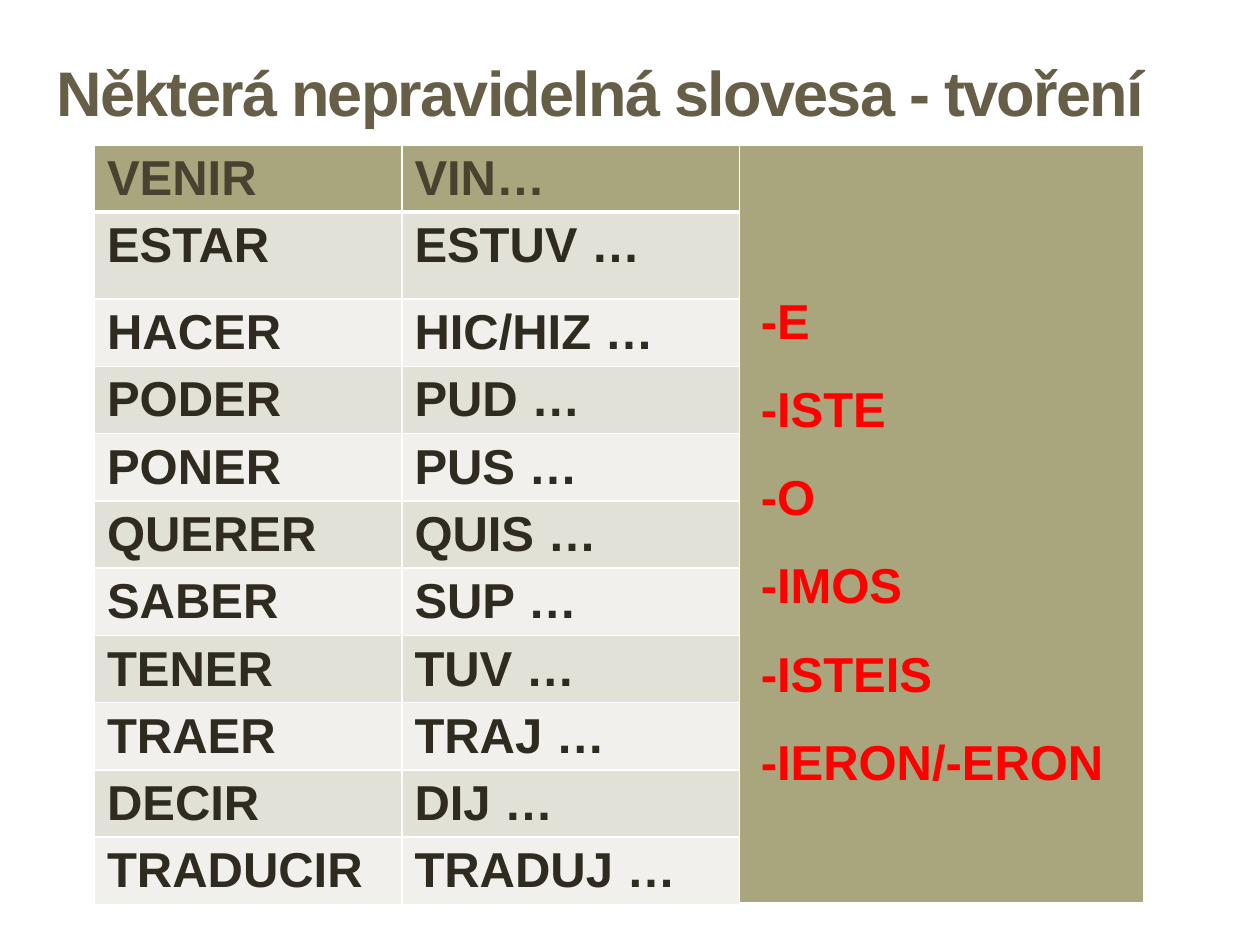
from typing import NamedTuple

from lxml import etree
from pptx import Presentation
from pptx.dml.color import RGBColor
from pptx.enum.text import MSO_ANCHOR, PP_ALIGN
from pptx.oxml.ns import qn
from pptx.util import Inches, Pt

MIDDLE = MSO_ANCHOR.MIDDLE
CENTER = PP_ALIGN.CENTER
FONT = "Arial"
TEXT_SIZE = 28
COLORS = {
    "title": "675E47",
    "header_text": "494231",
    "verb_text": "2F2B20",
    "ending": "FF0000",
    "header": "A9A57C",
    "odd_row": "E2E1D7",
    "even_row": "F1F0EC",
    "border": "FFFFFF",
}


class Verb(NamedTuple):
    infinitive: str
    stem: str


VERBS = [
    Verb("VENIR", "VIN…"),
    Verb("ESTAR", "ESTUV …"),
    Verb("HACER", "HIC/HIZ …"),
    Verb("PODER", "PUD …"),
    Verb("PONER", "PUS …"),
    Verb("QUERER", "QUIS …"),
    Verb("SABER", "SUP …"),
    Verb("TENER", "TUV …"),
    Verb("TRAER", "TRAJ …"),
    Verb("DECIR", "DIJ …"),
    Verb("TRADUCIR", "TRADUJ …"),
]
ENDINGS = ["-E", "-ISTE", "-O", "-IMOS", "-ISTEIS", "-IERON/-ERON"]
COLUMN_WIDTHS = [2.44, 2.68, 3.21]
ROW_HEIGHT = 0.51
TALL_ROW, TALL_HEIGHT = 1, 0.69


def add_run(paragraph, text: str, size: float, color: str):
    run = paragraph.add_run()
    run.text = text
    run.font.name = FONT
    run.font.size = Pt(size)
    run.font.bold = True
    run.font.color.rgb = RGBColor.from_string(COLORS[color])
    return run


def set_borders(cell, top: float, bottom: float) -> None:
    """Draw all four cell borders; the schema wants them before the fill."""
    properties = cell._tc.get_or_add_tcPr()
    widths = {"a:lnL": 1, "a:lnR": 1, "a:lnT": top, "a:lnB": bottom}
    for position, (side, width) in enumerate(widths.items()):
        line = etree.Element(qn(side), w=str(Pt(width)))
        fill = etree.SubElement(line, qn("a:solidFill"))
        etree.SubElement(fill, qn("a:srgbClr"), val=COLORS["border"])
        properties.insert(position, line)


def add_title(slide) -> None:
    title = slide.shapes.title
    title.left, title.top = Inches(0.2), Inches(0.29)
    title.width, title.height = Inches(9.13), Inches(0.87)
    title.text_frame.vertical_anchor = MIDDLE
    heading = title.text_frame.paragraphs[0]
    heading.alignment = CENTER
    run = add_run(heading, "Některá nepravidelná slovesa - tvoření", 36, "title")
    run.font._element.set("spc", "-100")


def add_verb_table(slide) -> None:
    heights = [ROW_HEIGHT] * len(VERBS)
    heights[TALL_ROW] = TALL_HEIGHT
    table = slide.shapes.add_table(
        len(VERBS), len(COLUMN_WIDTHS), Inches(0.75), Inches(1.15),
        Inches(sum(COLUMN_WIDTHS)), Inches(sum(heights)),
    ).table
    for column, width in zip(table.columns, COLUMN_WIDTHS):
        column.width = Inches(width)
    for row, height in zip(table.rows, heights):
        row.height = Inches(height)

    endings_column = len(COLUMN_WIDTHS) - 1
    table.cell(0, endings_column).merge(table.cell(len(VERBS) - 1, endings_column))

    for row, verb in enumerate(VERBS):
        is_header = row == 0
        row_fill = "header" if is_header else "odd_row" if row % 2 else "even_row"
        for column in range(len(COLUMN_WIDTHS)):
            cell = table.cell(row, column)
            fill = "header" if column == endings_column else row_fill
            cell.fill.solid()
            cell.fill.fore_color.rgb = RGBColor.from_string(COLORS[fill])
            header_edge = 3 if row == 1 and column < endings_column else 1
            set_borders(cell, top=header_edge, bottom=3 if is_header else 1)
            if column < endings_column:
                add_run(cell.text_frame.paragraphs[0], verb[column], TEXT_SIZE,
                        "header_text" if is_header else "verb_text")


def add_endings(slide) -> None:
    frame = slide.shapes.add_textbox(
        Inches(5.94), Inches(2.02), Inches(3.23), Inches(4.34)
    ).text_frame
    frame.word_wrap = True
    for index, ending in enumerate(ENDINGS):
        paragraph = frame.add_paragraph() if index else frame.paragraphs[0]
        paragraph.line_spacing = 1.5
        add_run(paragraph, ending, TEXT_SIZE, "ending")


def main() -> None:
    presentation = Presentation()
    presentation.slide_width = Inches(10)
    presentation.slide_height = Inches(7.5)
    title_only = presentation.slide_layouts[5]
    slide = presentation.slides.add_slide(title_only)
    add_title(slide)
    add_verb_table(slide)
    add_endings(slide)
    presentation.save("out.pptx")


if __name__ == "__main__":
    main()
